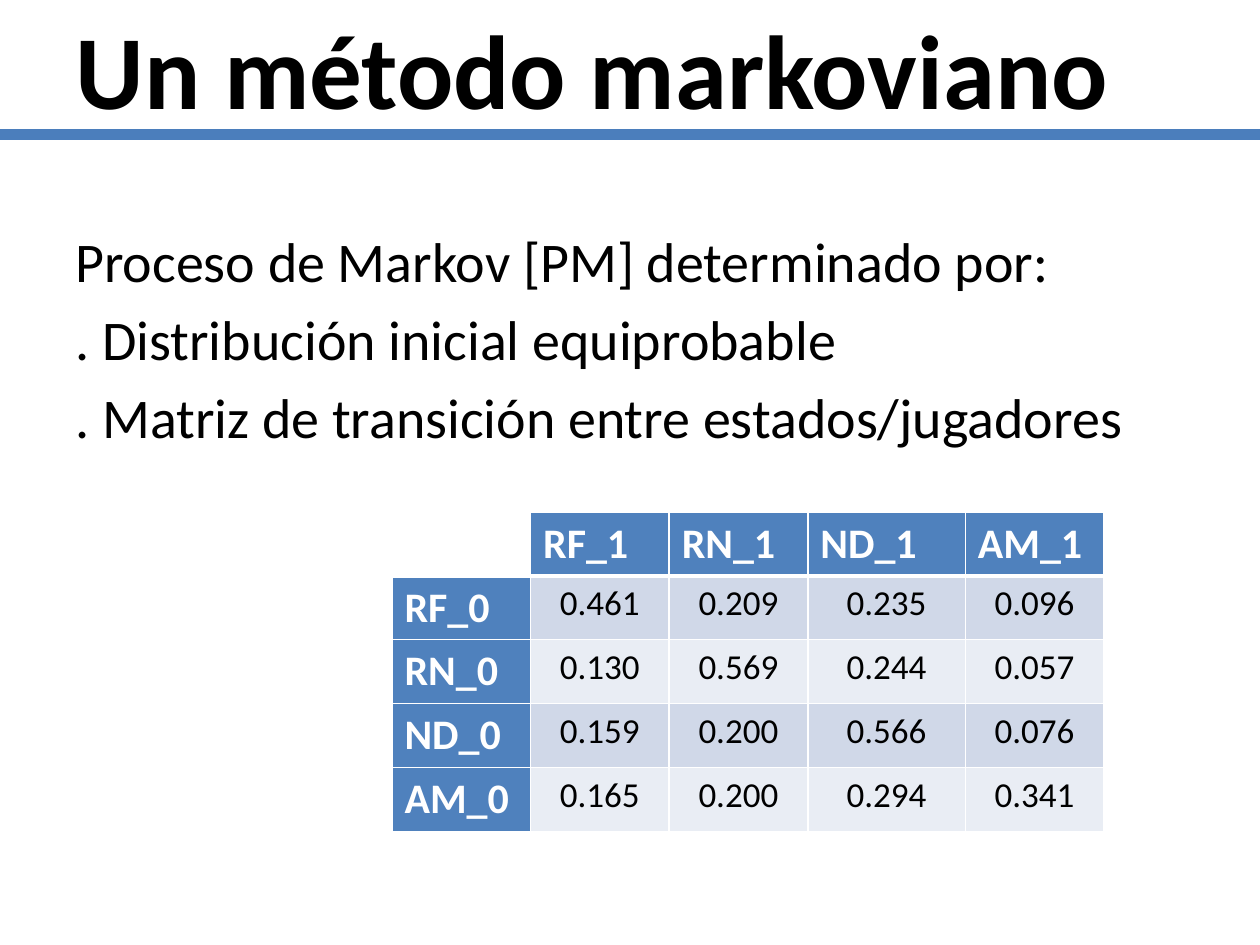
from dataclasses import dataclass

from lxml import etree
from pptx import Presentation
from pptx.dml.color import RGBColor
from pptx.enum.shapes import MSO_CONNECTOR
from pptx.enum.text import MSO_ANCHOR, MSO_AUTO_SIZE, PP_ALIGN
from pptx.oxml.ns import qn
from pptx.util import Pt

STRAIGHT = MSO_CONNECTOR.STRAIGHT
MIDDLE = MSO_ANCHOR.MIDDLE
NO_FIT = MSO_AUTO_SIZE.NONE
LEFT, CENTER = PP_ALIGN.LEFT, PP_ALIGN.CENTER

FONT = "Calibri"
BLACK = RGBColor(0x00, 0x00, 0x00)
WHITE = RGBColor(0xFF, 0xFF, 0xFF)
RULE_BLUE = RGBColor(0x4B, 0x7E, 0xBC)
HEADER_BLUE = RGBColor(0x4F, 0x81, 0xBD)
BANDS = (RGBColor(0xD0, 0xD8, 0xE8), RGBColor(0xE9, 0xED, 0xF4))

SLIDE_W, SLIDE_H = 720, 540
MARGIN = 36
RULE_Y = 77
ROW_H = 36.5
COL_WIDTHS = (79.2, 79.2, 79.2, 90, 79.2)


@dataclass(frozen=True)
class TextStyle:
    size: float
    color: RGBColor = BLACK
    bold: bool = False
    align: PP_ALIGN = LEFT
    space_before: float = 0


TITLE = TextStyle(60, bold=True)
BODY = TextStyle(32, space_before=6)
HEADER = TextStyle(24, WHITE, bold=True)
VALUE = TextStyle(20, align=CENTER)

BODY_LINES = (
    "Proceso de Markov [PM] determinado por:",
    ". Distribución inicial equiprobable",
    ". Matriz de transición entre estados/jugadores",
)
STATES = ("RF", "RN", "ND", "AM")
TRANSITIONS = (
    (0.461, 0.209, 0.235, 0.096),
    (0.130, 0.569, 0.244, 0.057),
    (0.159, 0.200, 0.566, 0.076),
    (0.165, 0.200, 0.294, 0.341),
)


def write(tf, text: str, style: TextStyle) -> None:
    tf.text = text
    for p in tf.paragraphs:
        p.alignment = style.align
        p.space_before = Pt(style.space_before)
        p.font.name = FONT
        p.font.size = Pt(style.size)
        p.font.bold = style.bold
        p.font.color.rgb = style.color


def set_borders(cell, top: float = 1, bottom: float = 1) -> None:
    tc_pr = cell._tc.get_or_add_tcPr()
    for side, width in (("L", 1), ("R", 1), ("T", top), ("B", bottom)):
        ln = etree.SubElement(tc_pr, qn(f"a:ln{side}"), w=str(Pt(width)))
        fill = etree.SubElement(ln, qn("a:solidFill"))
        etree.SubElement(fill, qn("a:srgbClr"), val=str(WHITE))


def fill_cell(cell, text: str, style: TextStyle, color: RGBColor) -> None:
    write(cell.text_frame, text, style)
    cell.fill.solid()
    cell.fill.fore_color.rgb = color


def add_rule(s) -> None:
    rule = s.shapes.add_connector(STRAIGHT, 0, Pt(RULE_Y), Pt(SLIDE_W), Pt(RULE_Y))
    rule.line.color.rgb = RULE_BLUE
    rule.line.width = Pt(6)
    etree.SubElement(rule._element.spPr, qn("a:effectLst"))


def add_body(s) -> None:
    sp = s.shapes.add_textbox(Pt(MARGIN), Pt(126), Pt(SLIDE_W - 2 * MARGIN), Pt(356.4))
    tf = sp.text_frame
    tf.word_wrap = True
    write(tf, "\n".join(BODY_LINES), BODY)


def add_matrix(s) -> None:
    n = len(STATES) + 1
    frame = s.shapes.add_table(n, n, Pt(224), Pt(292.6),
                               Pt(sum(COL_WIDTHS)), Pt(n * ROW_H))
    table = frame.table
    table.horz_banding = False
    for column, width in zip(table.columns, COL_WIDTHS):
        column.width = Pt(width)
    for i, row in enumerate(table.rows):
        row.height = Pt(ROW_H)
        for cell in row.cells:
            set_borders(cell, top=3 if i == 1 else 1, bottom=3 if i == 0 else 1)

    # Empty corner, then state labels on both axes
    table.cell(0, 0).fill.background()
    for i, state in enumerate(STATES, start=1):
        fill_cell(table.cell(0, i), f"{state}_1", HEADER, HEADER_BLUE)
        fill_cell(table.cell(i, 0), f"{state}_0", HEADER, HEADER_BLUE)

    # Transition probabilities in alternating bands
    for i, probabilities in enumerate(TRANSITIONS):
        for j, value in enumerate(probabilities):
            fill_cell(table.cell(i + 1, j + 1), f"{value:.3f}", VALUE,
                      BANDS[i % len(BANDS)])


def format_title(s) -> None:
    title = s.shapes.title
    title.left, title.top = Pt(MARGIN), Pt(0)
    title.width, title.height = Pt(SLIDE_W - 2 * MARGIN), Pt(RULE_Y)
    tf = title.text_frame
    tf.auto_size = NO_FIT
    tf.vertical_anchor = MIDDLE
    write(tf, "Un método markoviano", TITLE)


def main() -> None:
    prs = Presentation()
    prs.slide_width, prs.slide_height = Pt(SLIDE_W), Pt(SLIDE_H)
    s = prs.slides.add_slide(prs.slide_layouts.get_by_name("Title Only"))
    add_rule(s)
    add_body(s)
    add_matrix(s)
    format_title(s)
    prs.save("out.pptx")


if __name__ == "__main__":
    main()
